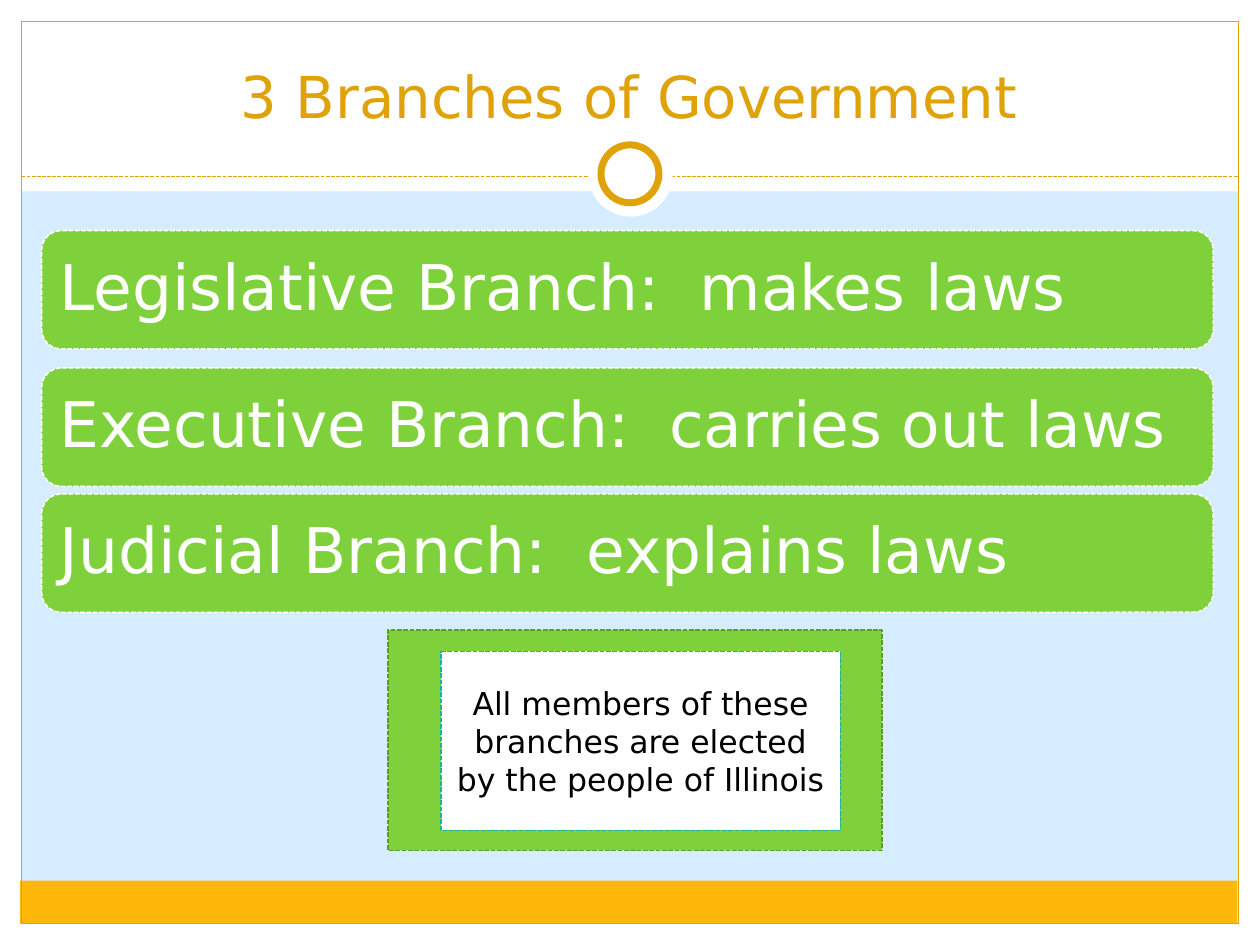
from pptx import Presentation, util as u
from pptx.dml.color import RGBColor
from pptx.enum import dml, shapes, text
from pptx.oxml.ns import qn
from lxml import etree

WHITE = RGBColor(0xFF, 0xFF, 0xFF)
BLACK = RGBColor(0, 0, 0)
SKY = RGBColor(0xD6, 0xEC, 0xFF)
AMBER = RGBColor(0xFE, 0xB8, 0x0A)
GOLD = RGBColor(0xE0, 0xA2, 0x09)
GREEN = RGBColor(0x7F, 0xD1, 0x3B)
DARK_GREEN = RGBColor(0x5E, 0x9B, 0x2C)
TEAL = RGBColor(0x1A, 0xB3, 0x9F)

CENTER = text.PP_ALIGN.CENTER
MIDDLE = text.MSO_ANCHOR.MIDDLE
KIND = shapes.MSO_SHAPE


def write(shape, words, size, color, align=CENTER, anchor=MIDDLE,
          inset=None, line_spacing=None, font="DejaVu Sans"):
    frame = shape.text_frame
    frame.word_wrap = True
    frame.vertical_anchor = anchor
    if inset is not None:
        frame.margin_left = frame.margin_right = u.Inches(inset)
        frame.margin_top = frame.margin_bottom = u.Inches(inset)
    paragraph = frame.paragraphs[0]
    paragraph.alignment = align
    paragraph.line_spacing = line_spacing
    run = paragraph.add_run()
    run.text = words
    run.font.name = font
    run.font.size = u.Pt(size)
    run.font.color.rgb = color


class SlideBuilder:
    """Holds the current slide and its shared dashed-line style."""

    dash = dml.MSO_LINE.SQUARE_DOT  # written as sysDot
    dash_name = "sysDash"

    def __init__(self, slide, background):
        self.slide = slide
        slide.background.fill.solid()
        slide.background.fill.fore_color.rgb = background

    def outline(self, line, color, width, dashed):
        line.color.rgb = color
        line.width = u.Pt(width)
        if dashed:
            line.dash_style = self.dash
            line._ln.find(qn("a:prstDash")).set("val", self.dash_name)

    def shape(self, kind, left, top, width, height, fill=None,
              line=None, line_width=0.9, dashed=False):
        shape = self.slide.shapes.add_shape(
            kind, *map(u.Inches, (left, top, width, height)))
        shape.shadow.inherit = False
        if fill is None:
            shape.fill.background()
        else:
            shape.fill.solid()
            shape.fill.fore_color.rgb = fill
        if line is None:
            shape.line.fill.background()
        else:
            self.outline(shape.line, line, line_width, dashed)
        return shape

    def rule(self, left, right, y, color, width):
        connector = self.slide.shapes.add_connector(
            shapes.MSO_CONNECTOR.STRAIGHT,
            *map(u.Inches, (left, y, right, y)))
        self.outline(connector.line, color, width, dashed=True)
        etree.SubElement(connector._element.spPr, qn("a:effectLst"))

    def textbox(self, left, top, width, height, words, **style):
        box = self.slide.shapes.add_textbox(
            *map(u.Inches, (left, top, width, height)))
        write(box, words, **style)


def main():
    presentation = Presentation()
    presentation.slide_width = u.Inches(10)
    presentation.slide_height = u.Inches(7.5)
    slide = presentation.slides.add_slide(presentation.slide_layouts[6])
    builder = SlideBuilder(slide, SKY)

    # White margins and header band
    for area in ((0, 7.33, 10, 0.17), (0, 0, 10, 1.52),
                 (0, 0, 0.17, 7.5), (9.83, 0, 0.17, 7.5)):
        builder.shape(KIND.RECTANGLE, *area, fill=WHITE)

    # Footer bar, frame and header rule
    builder.shape(KIND.RECTANGLE, 0.16, 6.99, 9.66, 0.34, fill=AMBER)
    builder.shape(KIND.RECTANGLE, 0.17, 0.17, 9.66, 7.16,
                  line=GOLD, line_width=0.75)
    builder.rule(0.17, 9.83, 1.4, GOLD, 0.75)

    # Ring on the header rule
    builder.shape(KIND.OVAL, 4.67, 1.05, 0.67, 0.67, fill=WHITE)
    builder.shape(KIND.OVAL, 4.77, 1.15, 0.46, 0.46, fill=WHITE,
                  line=GOLD, line_width=4)

    # Title
    builder.textbox(0.33, 0.25, 9.33, 0.83, "3 Branches of Government",
                    size=33, color=GOLD, anchor=text.MSO_ANCHOR.BOTTOM)

    # Branch bars
    branches = ((1.83, "Legislative Branch:  makes laws"),
                (2.92, "Executive Branch:  carries out laws"),
                (3.92, "Judicial Branch:  explains laws"))
    for top, words in branches:
        bar = builder.shape(KIND.ROUNDED_RECTANGLE, 0.33, top, 9.3, 0.94,
                            fill=GREEN, line=WHITE, dashed=True)
        write(bar, words, size=36, color=WHITE, align=text.PP_ALIGN.LEFT,
              inset=0.1, line_spacing=0.9)

    # Note about elections
    builder.shape(KIND.RECTANGLE, 3.08, 5, 3.92, 1.75,
                  fill=GREEN, line=DARK_GREEN, dashed=True)
    note = builder.shape(KIND.FLOWCHART_PROCESS, 3.5, 5.17, 3.17, 1.42,
                         fill=WHITE, line=TEAL, dashed=True)
    write(note, "All members of these branches are elected by the people "
          "of Illinois", size=18, color=BLACK)

    presentation.save("out.pptx")


if __name__ == "__main__":
    main()
